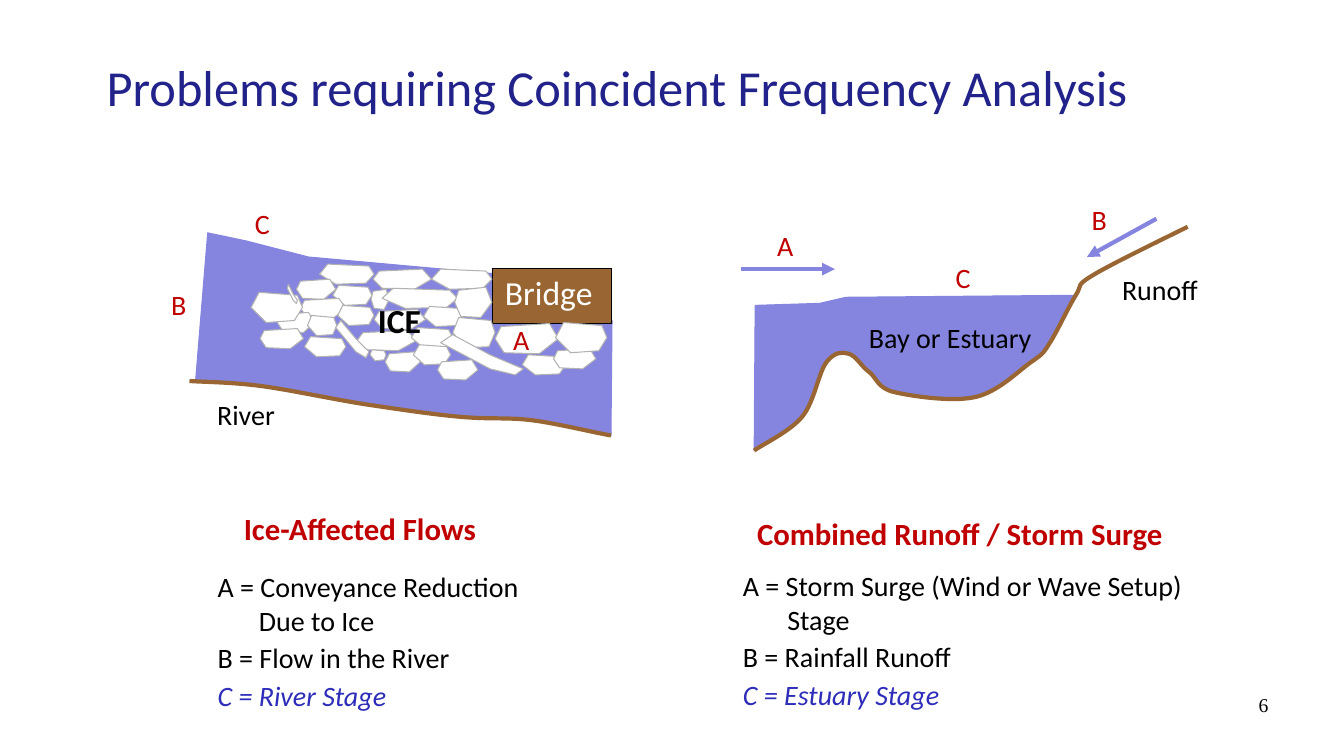
"""Build a slide with two river sketches that call for coincident frequency analysis."""
from lxml import etree
from pptx import Presentation
from pptx.dml.color import RGBColor
from pptx.enum.shapes import MSO_CONNECTOR, MSO_SHAPE
from pptx.enum.text import MSO_ANCHOR, PP_ALIGN
from pptx.oxml.ns import qn
from pptx.util import Inches, Pt

CELL = Inches(0.01)
COLUMNS, ROWS = 1333, 750

LEFT, CENTER, RIGHT = PP_ALIGN.LEFT, PP_ALIGN.CENTER, PP_ALIGN.RIGHT
MIDDLE, TOP = MSO_ANCHOR.MIDDLE, MSO_ANCHOR.TOP
STRAIGHT, RECTANGLE = MSO_CONNECTOR.STRAIGHT, MSO_SHAPE.RECTANGLE

BLACK = RGBColor(0x00, 0x00, 0x00)
WHITE = RGBColor(0xFF, 0xFF, 0xFF)
WATER = RGBColor(0x85, 0x85, 0xE0)
EARTH = RGBColor(0x99, 0x66, 0x33)
ICE_EDGE = RGBColor(0xB2, 0xB2, 0xB2)
RED = RGBColor(0xC0, 0x00, 0x00)
NAVY = RGBColor(0x22, 0x22, 0x8B)
BLUE = RGBColor(0x2D, 0x2D, 0xB9)

BAY_BED = [(748, 447), (796, 413), (820, 359), (842, 351), (862, 369), (887, 389),
           (967, 394), (1023, 359), (1042, 339), (1067, 293), (1084, 273), (1178, 225)]
BAY_SHORE = 9
BAY_SURFACE = [(839, 295), (813, 301), (749, 303)]
RIVER_BED = [(188, 378), (259, 383), (368, 402), (462, 414), (528, 417), (606, 432)]
RIVER_SURFACE = [(607, 318), (495, 318), (495, 272), (306, 255), (244, 239), (206, 231),
                 (194, 378)]

BLOCK = [(0.15, 0), (0.9, 0.1), (1, 0.5), (0.85, 0.95), (0.3, 1), (0, 0.5)]
SHARD = [(0.15, 0), (0.6, 0.5), (1, 0.85), (0.9, 1), (0.6, 0.85), (0, 0.2)]
FLOES_BY_HEIGHT = {
    20: [(317, 262, 54), (370, 267, 58), (428, 267, 60), (294, 277, 39), (330, 283, 39),
         (368, 287, 18), (379, 286, 75), (298, 296, 45), (335, 303, 36), (371, 307, 51),
         (420, 304, 39), (275, 310, 37), (305, 313, 29), (354, 328, 59), (408, 325, 41),
         (258, 326, 43), (302, 334, 41), (382, 349, 35), (410, 342, 37), (434, 357, 40),
         (518, 352, 43), (549, 346, 42)],
    30: [(249, 290, 51), (451, 285, 37), (449, 315, 42), (491, 321, 63), (551, 320, 51)],
    11: [(367, 347, 16)]}
SHARDS = [(437, 332, 82, 40), (333, 318, 33, 37), (285, 282, 10, 19)]

LETTERS = [("A", 499, 315), ("B", 160, 280), ("C", 243, 200),
           ("A", 761, 222), ("B", 1073, 196), ("C", 938, 254)]
HANGING = {"margin": 44, "indent": -44}
LATER = {**HANGING, "before": 3}
RESULT = {**LATER, "color": BLUE, "italic": True}
HEADING = {"size": 22, "color": RED, "bold": True}
ICE_LEGEND = [("A = Conveyance Reduction", HANGING), ("Due to Ice", {"margin": 41}),
              ("B = Flow in the River", LATER), ("C = River Stage", RESULT)]
SURGE_LEGEND = [("A = Storm Surge (Wind or Wave Setup) Stage", HANGING),
                ("B = Rainfall Runoff", LATER), ("C = Estuary Stage", RESULT)]


def cells(*counts):
    """Turn counts of grid cells into lengths."""
    return [count * CELL for count in counts]


def write_paragraph(paragraph, text, size=20, color=BLACK, font="Calibri", bold=False,
                    italic=False, align=LEFT, before=0, margin=0, indent=0):
    """Fill one paragraph with formatted text."""
    paragraph.alignment = align
    paragraph.space_before = Pt(before)
    properties = paragraph._p.get_or_add_pPr()
    properties.set("marL", str(margin * CELL))
    properties.set("indent", str(indent * CELL))
    run = paragraph.add_run()
    run.text = text
    run.font.name, run.font.size = font, Pt(size)
    run.font.bold, run.font.italic = bold, italic
    run.font.color.rgb = color


def add_text(shapes, box, text, wrap=False, anchor=TOP, **text_format):
    """Add a text box from one string or a list of (string, format) pairs."""
    frame = shapes.add_textbox(*cells(*box)).text_frame
    frame.word_wrap, frame.vertical_anchor = wrap, anchor
    entries = [(text, text_format)] if isinstance(text, str) else text
    for number, (line, line_format) in enumerate(entries):
        paragraph = frame.add_paragraph() if number else frame.paragraphs[0]
        write_paragraph(paragraph, line, **line_format)


def paint(shape, fill, line, width=0.75):
    """Give a shape its fill and outline, without shadow."""
    shape.shadow.inherit = False
    if fill is None:
        shape.fill.background()
    else:
        shape.fill.solid()
        shape.fill.fore_color.rgb = fill
    shape.line.color.rgb, shape.line.width = line, Pt(width)


def add_outline(shapes, points, close=True):
    """Add a freeform through grid points."""
    builder = shapes.build_freeform(*points[0], scale=CELL)
    builder.add_line_segments(points[1:], close=close)
    return builder.convert_to_shape()


def add_curve(shapes, points, close=False):
    """Add a freeform from a start and triples of Bezier points."""
    shape = add_outline(shapes, points, close)
    segments = shape.element.xpath(".//a:lnTo")
    for start in range(0, len(segments), 3):
        curve = etree.Element(qn("a:cubicBezTo"))
        segments[start].addprevious(curve)
        for segment in segments[start:start + 3]:
            curve.append(segment[0])
            segment.getparent().remove(segment)
    return shape


def smooth(knots):
    """Join knots by Bezier triples whose tangents follow the neighbouring knots."""
    padded = [knots[0], *knots, knots[-1]]
    points = [knots[0]]
    for before, start, end, after in zip(padded, knots, knots[1:], padded[3:]):
        points += [tuple(s + (e - b) / 6 for b, s, e in zip(before, start, end)),
                   tuple(e - (a - s) / 6 for s, e, a in zip(start, end, after)), end]
    return points


def add_water_and_bed(shapes, bed, surface, shore):
    """Fill the water between its surface and the bed up to the shore, then draw the bed."""
    curve = smooth(bed)
    water = curve[:3 * shore + 1]
    previous = water[-1]
    for point in surface:
        water += [previous, point, point]
        previous = point
    paint(add_curve(shapes, water, close=True), WATER, WATER)
    paint(add_curve(shapes, curve), None, EARTH, 3)


def add_floe(shapes, template, left, top, width, height, flip=False):
    """Fit a template outline into a box, mirrored if asked."""
    points = [(left + width * (1 - x if flip else x), top + height * y) for x, y in template]
    paint(add_outline(shapes, points), WHITE, ICE_EDGE)


def add_arrow(shapes, start, end):
    """Draw a flow arrow between two grid points."""
    arrow = shapes.add_connector(STRAIGHT, *cells(*start, *end))
    arrow.line.color.rgb, arrow.line.width = WATER, Pt(3)
    etree.SubElement(arrow.line._get_or_add_ln(), qn("a:tailEnd"), type="triangle")
    etree.SubElement(arrow.element.spPr, qn("a:effectLst"))


def draw_bay(shapes):
    """Draw the estuary with its surge and runoff arrows."""
    add_water_and_bed(shapes, BAY_BED, BAY_SURFACE, BAY_SHORE)
    add_text(shapes, (851, 313, 183, 44), "Bay or Estuary", align=CENTER)
    add_arrow(shapes, (735, 267), (828, 267))
    add_arrow(shapes, (1147, 217), (1078, 255))


def draw_river(shapes):
    """Draw the river with its bridge and ice jam."""
    add_water_and_bed(shapes, RIVER_BED, RIVER_SURFACE, len(RIVER_BED) - 1)
    paint(shapes.add_shape(RECTANGLE, *cells(488, 266, 119, 55)), EARTH, BLACK)
    add_text(shapes, (491, 265, 108, 51), "Bridge", size=24, color=WHITE)
    for height, floes in FLOES_BY_HEIGHT.items():
        for number, floe in enumerate(floes):
            add_floe(shapes, BLOCK, *floe, height, flip=number % 2 == 1)
    for shard in SHARDS:
        add_floe(shapes, SHARD, *shard)
    add_text(shapes, (365, 293, 76, 50), "ICE", wrap=True, size=24, bold=True)


def main():
    """Build and save the slide."""
    presentation = Presentation()
    presentation.slide_width, presentation.slide_height = cells(COLUMNS, ROWS)
    shapes = presentation.slides.add_slide(presentation.slide_layouts[6]).shapes
    draw_bay(shapes)
    draw_river(shapes.add_group_shape().shapes)
    add_text(shapes, (727, 559, 480, 153), SURGE_LEGEND, wrap=True)
    add_text(shapes, (206, 560, 321, 155), ICE_LEGEND)
    add_text(shapes, (232, 501, 256, 47), "Ice-Affected Flows", **HEADING)
    add_text(shapes, (741, 506, 428, 47), "Combined Runoff / Storm Surge", **HEADING)
    for letter, left, top in LETTERS:
        add_text(shapes, (left, top, 50, 43), letter, wrap=True, color=RED)
    add_text(shapes, (1102, 265, 97, 44), "Runoff", align=CENTER)
    add_text(shapes, (205, 389, 78, 44), "River", align=CENTER)
    add_text(shapes, (990, 683, 278, 50), "6", wrap=True, size=14,
             font="Times New Roman", align=RIGHT)
    add_text(shapes, (96, 23, 1188, 125), "Problems requiring Coincident Frequency Analysis",
             wrap=True, anchor=MIDDLE, size=36, color=NAVY)
    presentation.save("out.pptx")


if __name__ == "__main__":
    main()
